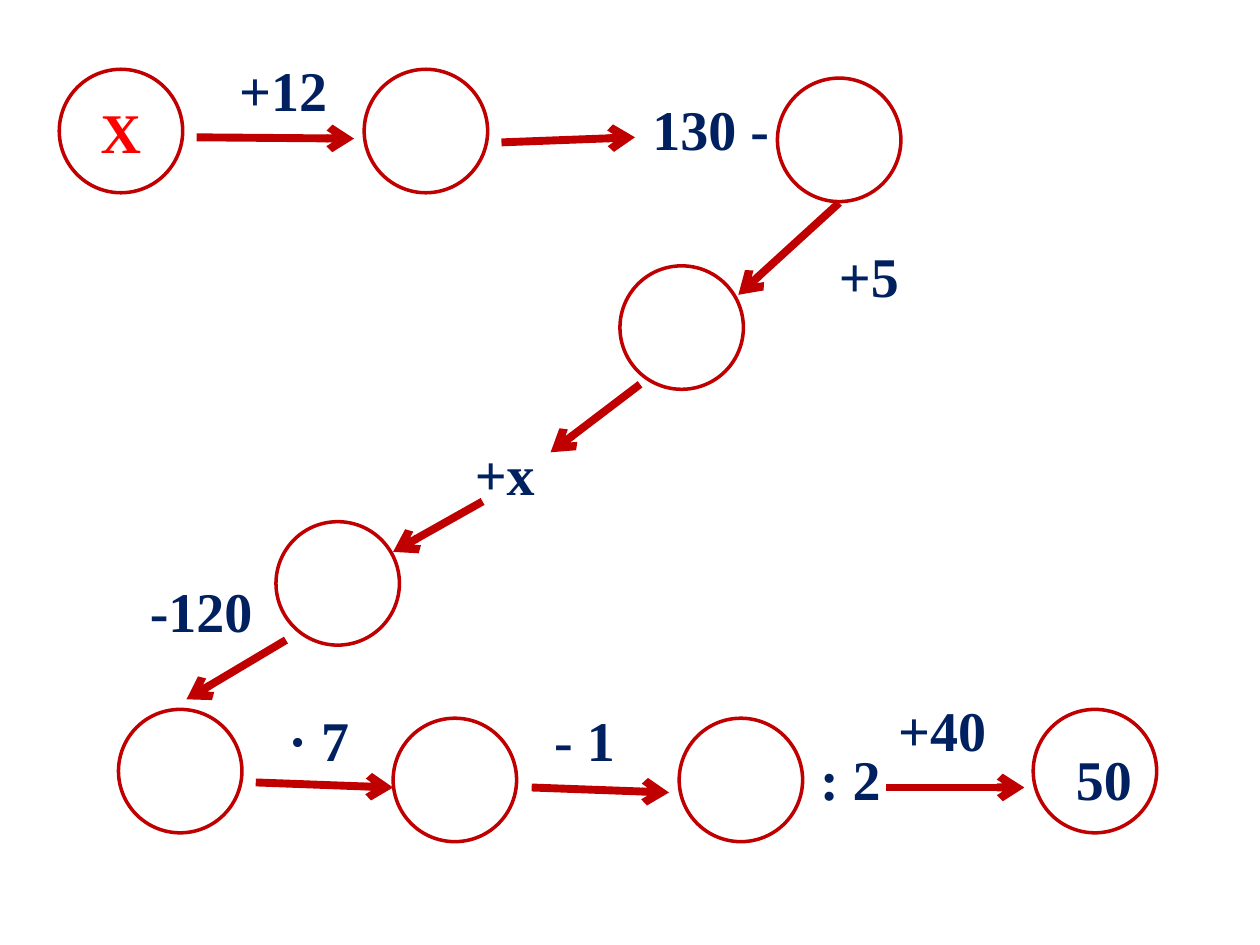
from dataclasses import dataclass

from lxml.etree import SubElement
from pptx import Presentation
from pptx.dml.color import RGBColor
from pptx.enum.shapes import MSO_CONNECTOR, MSO_SHAPE
from pptx.enum.text import MSO_ANCHOR, MSO_AUTO_SIZE, PP_ALIGN
from pptx.oxml.ns import qn
from pptx.util import Inches, Pt


@dataclass(frozen=True)
class Theme:
    font: str = "Times New Roman"
    size: Pt = Pt(32)
    ring: RGBColor = RGBColor(0xC0, 0x00, 0x00)
    paper: RGBColor = RGBColor(0xFF, 0xFF, 0xFF)
    operation: RGBColor = RGBColor(0x00, 0x20, 0x60)
    unknown: RGBColor = RGBColor(0xFF, 0x00, 0x00)
    ring_width: Pt = Pt(2)
    arrow_width: Pt = Pt(4.5)


DIAMETER = 0.98
LABEL_HEIGHT = 0.64


def write(frame, text, *, theme, color, align=PP_ALIGN.LEFT):
    paragraph = frame.paragraphs[0]
    paragraph.alignment = align
    run = paragraph.add_run()
    run.text = text
    run.font.name = theme.font
    run.font.size = theme.size
    run.font.bold = True
    run.font.color.rgb = color


class ChainSlide:
    def __init__(self, slide, theme):
        self.slide = slide
        self.theme = theme

    def circle(self, left, top, text=""):
        ring = self.slide.shapes.add_shape(
            MSO_SHAPE.OVAL, Inches(left), Inches(top), Inches(DIAMETER), Inches(DIAMETER))
        ring.shadow.inherit = False
        ring.fill.solid()
        ring.fill.fore_color.rgb = self.theme.paper
        ring.line.color.rgb = self.theme.ring
        ring.line.width = self.theme.ring_width
        if text:
            ring.text_frame.vertical_anchor = MSO_ANCHOR.MIDDLE
            write(ring.text_frame, text, theme=self.theme,
                  color=self.theme.unknown, align=PP_ALIGN.CENTER)

    def arrow(self, *ends):
        step = self.slide.shapes.add_connector(
            MSO_CONNECTOR.STRAIGHT, *(Inches(value) for value in ends))
        step.line.color.rgb = self.theme.ring
        step.line.width = self.theme.arrow_width
        SubElement(step.line._get_or_add_ln(), qn("a:tailEnd"), type="arrow")
        SubElement(step._element.spPr, qn("a:effectLst"))

    def label(self, left, top, width, text, wrap=False):
        box = self.slide.shapes.add_textbox(
            Inches(left), Inches(top), Inches(width), Inches(LABEL_HEIGHT))
        box.text_frame.word_wrap = wrap
        box.text_frame.auto_size = MSO_AUTO_SIZE.SHAPE_TO_FIT_TEXT
        write(box.text_frame, text, theme=self.theme, color=self.theme.operation)


def main():
    deck = Presentation()
    deck.slide_width, deck.slide_height = Inches(10), Inches(7.5)
    chain = ChainSlide(deck.slides.add_slide(deck.slide_layouts[6]), Theme())

    # Circles, in the order of the calculation
    chain.circle(0.47, 0.55, "Х")
    for left, top in [(2.89, 0.55), (6.17, 0.62), (4.92, 2.11), (2.19, 4.14),
                      (0.94, 5.63), (3.12, 5.7), (5.39, 5.7), (8.2, 5.63)]:
        chain.circle(left, top)

    # Arrows from each step to the next
    for ends in [(1.56, 1.09, 2.81, 1.1), (3.98, 1.13, 5.04, 1.09),
                 (6.66, 1.61, 5.86, 2.34), (5.08, 3.05, 4.37, 3.59),
                 (3.83, 3.98, 3.12, 4.38), (2.27, 5.08, 1.48, 5.55),
                 (2.03, 6.21, 3.12, 6.25), (4.22, 6.25, 5.31, 6.29),
                 (7.03, 6.25, 8.13, 6.25)]:
        chain.arrow(*ends)

    # Operations and the final result
    chain.label(1.8, 0.39, 0.9, "+12")
    chain.label(5.08, 0.7, 1.17, "130 -", wrap=True)
    chain.label(6.56, 1.87, 0.68, "+5")
    chain.label(3.67, 3.44, 1.17, "+х", wrap=True)
    chain.label(1.09, 4.53, 1.02, "-120")
    chain.label(2.19, 5.55, 0.69, "· 7")
    chain.label(4.3, 5.55, 0.69, "- 1")
    chain.label(6.41, 5.86, 0.69, ": 2")
    chain.label(7.03, 5.47, 0.91, "+40")
    chain.label(8.44, 5.86, 0.65, "50")

    deck.save("out.pptx")


if __name__ == "__main__":
    main()
